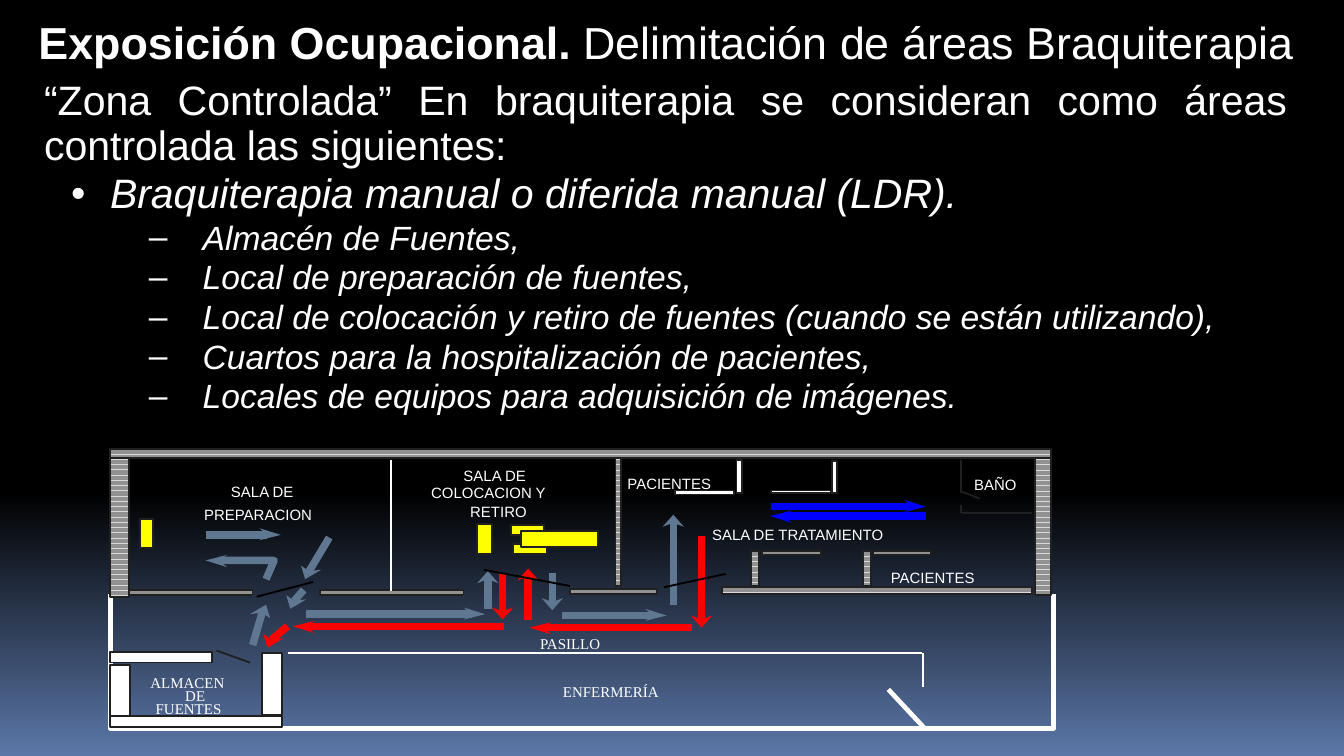
"""Build the slide on controlled areas in brachytherapy, with its floor plan."""
from pptx import Presentation
from pptx import util as u
from pptx.dml.color import RGBColor
from pptx.enum import dml, shapes, text
from pptx.oxml import ns, xmlchemy

Inches, Pt = u.Inches, u.Pt
WHITE = RGBColor(0xFF, 0xFF, 0xFF)
BLACK = RGBColor(0, 0, 0)
SKY = RGBColor(0x5B, 0x77, 0xA8)
DARK = RGBColor(0x20, 0x20, 0x20)
LIGHT_GRAY = RGBColor(0xDA, 0xDA, 0xDA)
MID_GRAY = RGBColor(0x91, 0x91, 0x91)
STEEL = RGBColor(0x5F, 0x77, 0x91)
YELLOW = RGBColor(0xFF, 0xFF, 0)
BLUE = RGBColor(0, 0, 0xFF)
RED = RGBColor(0xFF, 0, 0)

TITLE = [("Exposición Ocupacional.", True), (" Delimitación de áreas Braquiterapia", False)]
BODY = [
    (0, "“Zona Controlada” En braquiterapia se consideran como áreas controlada las siguientes:"),
    (1, "Braquiterapia manual o diferida manual (LDR)."),
    (2, "Almacén de Fuentes,"),
    (2, "Local de preparación de fuentes,"),
    (2, "Local de colocación y retiro de fuentes (cuando se están utilizando),"),
    (2, "Cuartos para la hospitalización de pacientes,"),
    (2, "Locales de equipos para adquisición de imágenes."),
]
LEVELS = [
    dict(size=22, before=2.2, bullet=None),
    dict(size=22, before=2.2, bullet="•", margin=0.49, indent=-0.29),
    dict(size=18, before=1.8, bullet="–", margin=1.18, indent=-0.4),
]

OUTLINE = [(0.82, 4.42), (0.82, 5.42), (7.84, 5.42), (7.84, 4.42)]
GRAY_WALLS = [
    (0.92, 4.39, 0.96, 0.04), (0.82, 3.34, 0.14, 1.1), (7.7, 3.34, 0.12, 1.09),
    (4.58, 3.34, 0.04, 1.02), (0.82, 3.34, 7, 0.07), (5.37, 4.37, 2.31, 0.05),
    (4.24, 4.38, 0.65, 0.04), (2.38, 4.39, 1.07, 0.04), (5.59, 4.1, 0.06, 0.26),
    (5.67, 4.1, 0.44, 0.03), (6.42, 4.1, 0.06, 0.26), (6.5, 4.1, 0.43, 0.03),
]
WHITE_WALLS = [
    (6.19, 3.43, 0.04, 0.24), (5.74, 3.65, 0.44, 0.02), (0.82, 5.33, 1.28, 0.08),
    (0.82, 4.95, 0.15, 0.38), (1.95, 4.86, 0.15, 0.46), (0.82, 4.85, 0.76, 0.08),
    (5.48, 3.42, 0.04, 0.25), (5.02, 3.65, 0.44, 0.03),
]
FURNITURE = [
    (3.82, 4.05, 0.25, 0.07), (3.8, 3.91, 0.25, 0.07), (3.88, 3.95, 0.57, 0.12),
    (3.55, 3.9, 0.11, 0.22), (1.04, 3.86, 0.1, 0.22),
]
LINES = [
    (WHITE, 1, [((2.91, 3.42), (2.91, 4.4)), ((2.14, 4.86), (6.86, 4.86)),
                ((6.87, 4.86), (6.87, 5.11))]),
    (DARK, 1, [((7.68, 3.82), (7.16, 3.82)), ((7.15, 3.42), (7.15, 3.67)),
               ((7.15, 3.82), (7.15, 3.76)), ((7.16, 3.66), (7.29, 3.71)),
               ((1.61, 4.84), (1.86, 4.93))]),
    (BLACK, 1, [((1.91, 4.44), (2.33, 4.33)), ((4.24, 4.36), (3.6, 4.24)),
                ((4.94, 4.37), (5.4, 4.27))]),
    (WHITE, 2.5, [((6.88, 5.42), (6.61, 5.13))]),
]

HEADS = {
    "right": [(-0.16, -0.05), (-0.1, 0), (-0.16, 0.04)],
    "down": [(0.08, -0.09), (0, -0.06), (-0.08, -0.09)],
    "down left": [(0.12, -0.07), (0.03, -0.06), (-0.03, -0.1)],
}
for way, reverse in [("right", "left"), ("down", "up"), ("down left", "up right")]:
    HEADS[reverse] = [(-x, -y) for x, y in HEADS[way]]

ARROWS = [
    (STEEL, "up right", [(1.88, 4.8), (1.98, 4.5)]),
    (STEEL, "left", [(1.98, 4.31), (2.04, 4.17), (1.53, 4.17)]),
    (STEEL, "right", [(1.53, 3.98), (2.09, 3.98)]),
    (STEEL, "down left", [(2.45, 4), (2.27, 4.31)]),
    (STEEL, "down left", [(2.26, 4.39), (2.16, 4.53)]),
    (STEEL, "right", [(2.28, 4.57), (3.61, 4.57)]),
    (STEEL, "up", [(3.63, 4.53), (3.63, 4.25)]),
    (STEEL, "down", [(4.11, 4.26), (4.11, 4.54)]),
    (STEEL, "right", [(4.18, 4.58), (4.96, 4.58)]),
    (STEEL, "up", [(5.01, 4.5), (5.01, 3.83)]),
    (BLUE, "right", [(5.74, 3.77), (6.89, 3.77)]),
    (BLUE, "left", [(6.89, 3.84), (5.73, 3.84)]),
    (RED, "down", [(5.22, 3.99), (5.22, 4.67)]),
    (RED, "left", [(5.15, 4.67), (3.94, 4.67)]),
    (RED, "up", [(3.93, 4.61), (3.93, 4.23)]),
    (RED, "down", [(3.74, 4.27), (3.74, 4.61)]),
    (RED, "left", [(3.75, 4.66), (2.18, 4.66)]),
    (RED, "down left", [(2.14, 4.66), (1.99, 4.82)]),
]

LABELS = {
    "Times New Roman": [
        ("ALMACEN", 1.02, 4.96, 0.75), ("DE", 1.28, 5.06, 0.35), ("FUENTES", 1.06, 5.16, 0.69),
        ("PASILLO", 3.92, 4.67, 0.66), ("ENFERMERÍA", 4.09, 5.03, 0.92),
    ],
    "Arial": [
        ("SALA DE", 1.62, 3.54, 0.71), ("PREPARACION", 1.42, 3.71, 1.02),
        ("SALA DE", 3.35, 3.42, 0.71), ("COLOCACION Y", 3.11, 3.55, 1.09),
        ("RETIRO", 3.4, 3.69, 0.62), ("PACIENTES", 4.57, 3.48, 0.84),
        ("PACIENTES", 6.53, 4.18, 0.84), ("BAÑO", 7.15, 3.49, 0.52),
        ("SALA DE TRATAMIENTO", 5.2, 3.86, 1.51),
    ],
}


def add_text(s, box, wrap=True):
    tf = s.shapes.add_textbox(*map(Inches, box)).text_frame
    tf.word_wrap = wrap
    tf.auto_size = text.MSO_AUTO_SIZE.SHAPE_TO_FIT_TEXT
    return tf


def set_font(p, size, name="Arial"):
    p.font.size, p.font.name = Pt(size), name
    p.font.color.rgb = WHITE


def add_bullet(p, char, margin, indent):
    pPr = p._p.get_or_add_pPr()
    pPr.set("marL", str(Inches(margin)))
    pPr.set("indent", str(Inches(indent)))
    color = xmlchemy.OxmlElement("a:buClr")
    color.append(xmlchemy.OxmlElement("a:srgbClr"))
    color[0].set("val", str(WHITE))
    font = xmlchemy.OxmlElement("a:buFont")
    font.set("typeface", "Arial")
    bullet = xmlchemy.OxmlElement("a:buChar")
    bullet.set("char", char)
    pPr.extend([color, font, bullet])


def add_rect(s, box, fill):
    sp = s.shapes.add_shape(shapes.MSO_SHAPE.RECTANGLE, *map(Inches, box))
    sp.shadow.inherit = False
    if fill is None:
        sp.fill.patterned()
        sp.fill.pattern = dml.MSO_PATTERN.HORIZONTAL
        sp.fill.fore_color.rgb, sp.fill.back_color.rgb = LIGHT_GRAY, MID_GRAY
    else:
        sp.fill.solid()
        sp.fill.fore_color.rgb = fill
    sp.line.color.rgb, sp.line.width = DARK, Pt(1)


def add_line(s, start, end, color, width):
    c = s.shapes.add_connector(shapes.MSO_CONNECTOR.STRAIGHT, *map(Inches, start + end))
    c.line.color.rgb, c.line.width = color, Pt(width)
    c._element.find(ns.qn("p:spPr")).append(xmlchemy.OxmlElement("a:effectLst"))


def add_outline(s, points, color, width=None):
    start, *rest = [tuple(map(Inches, point)) for point in points]
    builder = s.shapes.build_freeform(*start)
    builder.add_line_segments(rest, close=width is None)
    sp = builder.convert_to_shape()
    sp.shadow.inherit = False
    if width is None:
        sp.fill.solid()
        sp.fill.fore_color.rgb = color
        sp.line.fill.background()
    else:
        sp.fill.background()
        sp.line.color.rgb, sp.line.width = color, Pt(width)


def add_arrow(s, color, way, points):
    *route, (x, y) = points
    head = [(x + dx, y + dy) for dx, dy in HEADS[way]]
    route.append(head[1])
    if len(route) == 2:
        add_line(s, *route, color, 4)
    else:
        add_outline(s, route, color, 4)
    add_outline(s, [(x, y)] + head, color)


def main():
    prs = Presentation()
    prs.slide_width, prs.slide_height = Inches(10), Inches(10 * 9 / 16)
    s = prs.slides.add_slide(prs.slide_layouts[6])
    fill = s.background.fill
    fill.gradient()
    fill.gradient_angle = 270
    for stop, position, color in zip(fill.gradient_stops, (0.65, 1), (BLACK, SKY)):
        stop.position, stop.color.rgb = position, color

    tf = add_text(s, (0.23, 0.55, 9.45, 2.63))
    for i, (level, line) in enumerate(BODY):
        style = LEVELS[level]
        p = tf.add_paragraph() if i else tf.paragraphs[0]
        p.text, p.level, p.alignment = line, level, text.PP_ALIGN.JUSTIFY
        p.line_spacing, p.space_before = 0.9, Pt(style["before"])
        if style["bullet"]:
            add_bullet(p, style["bullet"], style["margin"], style["indent"])
        set_font(p, style["size"])
        p.font.italic = level > 0

    tf = add_text(s, (0.17, 0.06, 9.57, 0.5))
    tf.vertical_anchor = text.MSO_ANCHOR.MIDDLE
    p = tf.paragraphs[0]
    p.alignment = text.PP_ALIGN.CENTER
    set_font(p, 24)
    for part, bold in TITLE:
        r = p.add_run()
        r.text, r.font.bold = part, bold

    add_outline(s, OUTLINE, WHITE, 2.5)
    for boxes, color in [(GRAY_WALLS, None), (WHITE_WALLS, WHITE), (FURNITURE, YELLOW)]:
        for box in boxes:
            add_rect(s, box, color)
    for arrow in ARROWS:
        add_arrow(s, *arrow)
    for color, width, segments in LINES:
        for start, end in segments:
            add_line(s, start, end, color, width)
    for name, labels in LABELS.items():
        for label, x, y, width in labels:
            p = add_text(s, (x, y, width, 0.23), wrap=False).paragraphs[0]
            p.text = label
            set_font(p, 8, name)
    prs.save("out.pptx")


if __name__ == "__main__":
    main()
